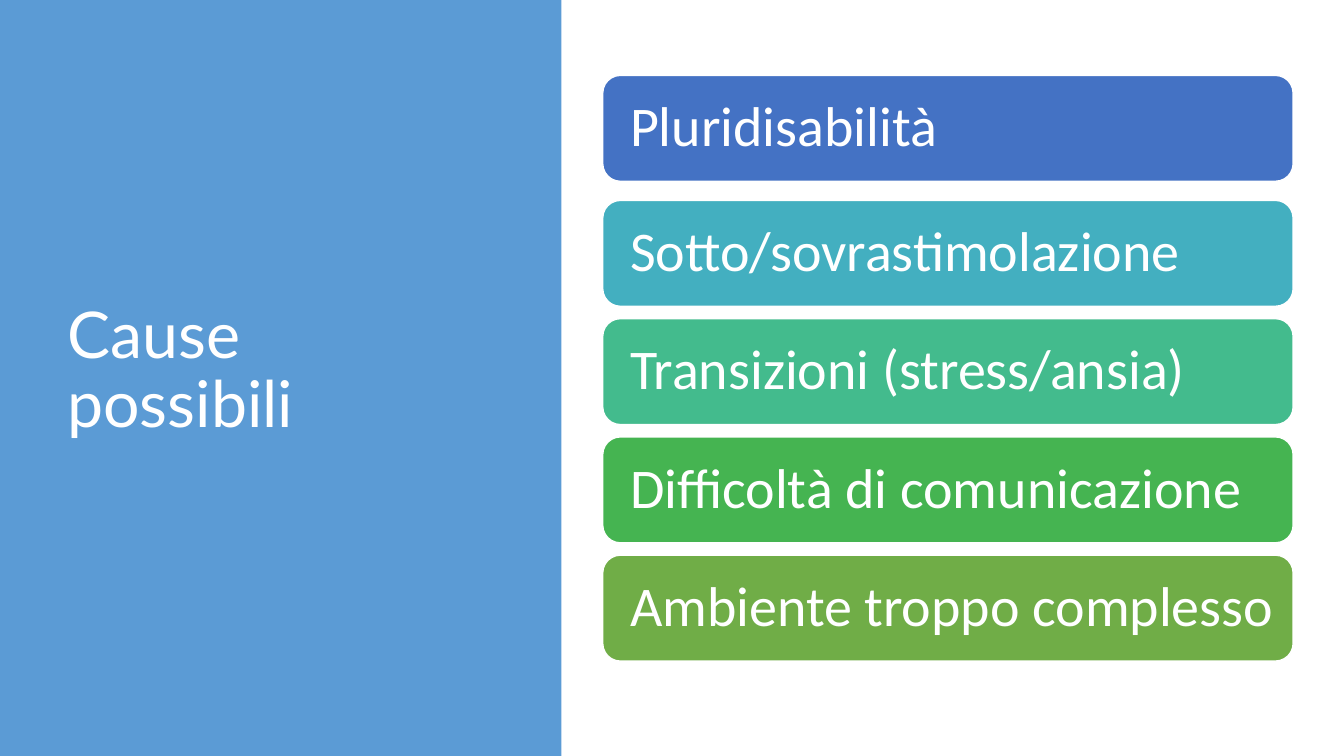
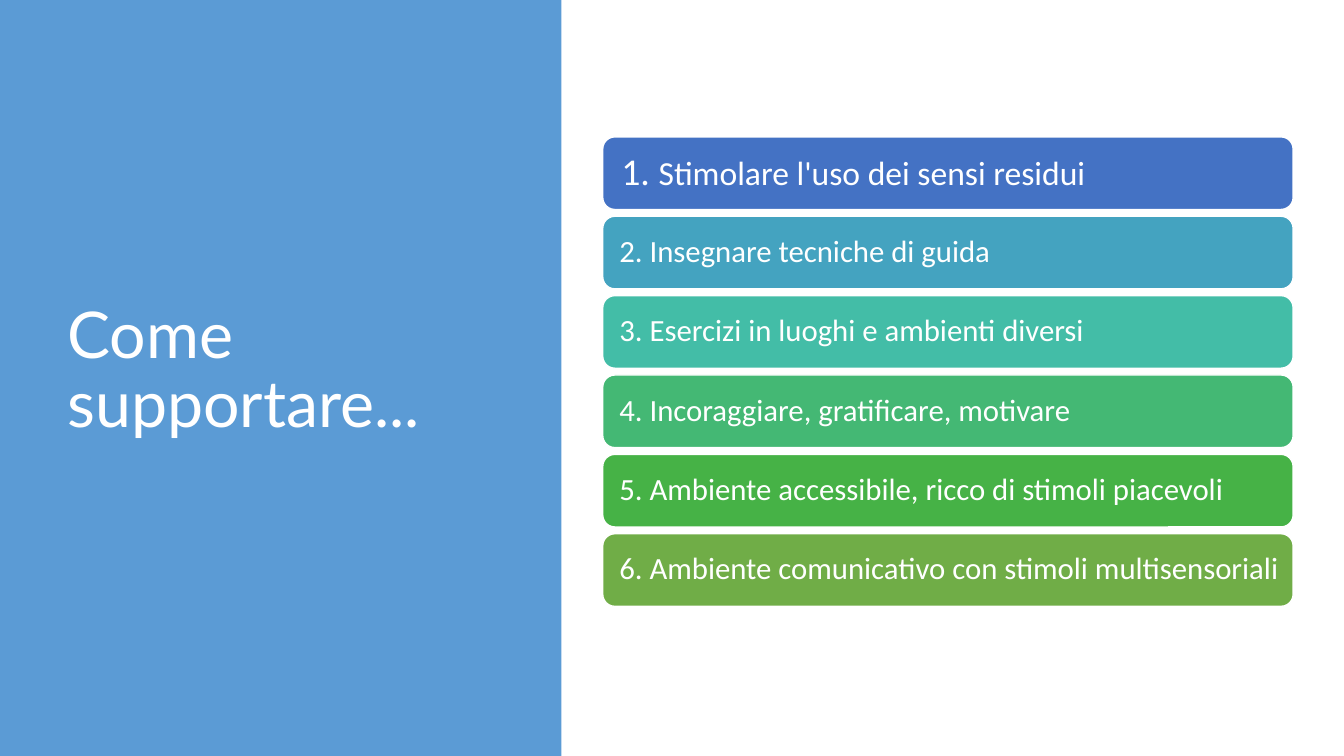
from pptx import Presentation
from pptx.dml.color import RGBColor
from pptx.enum import shapes, text
from pptx.util import Cm, Pt

HUES = {"panel": "5B9BD5", "white": "FFFFFF"}
FONTS = {"title": "Lato", "bar": "Calibri"}

# Content: each bar is (fill, left inset in cm, runs of (text, size))
DECK = [
    {
        "title": "Cause possibili", "wide": 10.57,
        "top": 1.9, "high": 2.67, "step": 2.98, "extra": 0.17,
        "bars": [
            ("4472C4", 0.56, [("Pluridisabilità", 40)]),
            ("43AFC0", 0.56, [("Sotto/sovrastimolazione", 40)]),
            ("43BB8D", 0.56, [("Transizioni (stress/ansia)", 40)]),
            ("45B451", 0.56, [("Difficoltà di comunicazione", 40)]),
            ("70AD47", 0.56, [("Ambiente troppo complesso", 40)]),
        ],
    },
    {
        "title": "Come supportare...", "wide": 11.73,
        "top": 3.45, "high": 1.83, "step": 2, "extra": 0,
        "bars": [
            ("4472C4", 0.38, [("1. ", 27), ("Stimolare l'uso dei sensi residui", 24)]),
            ("44A3C0", 0.33, [("2. Insegnare tecniche di guida", 22)]),
            ("43BDA7", 0.33, [("3. Esercizi in luoghi e ambienti diversi", 22)]),
            ("44B874", 0.33, [("4. Incoraggiare, gratificare, motivare", 22)]),
            ("46B246", 0.33, [("5. Ambiente accessibile, ricco di stimoli piacevoli", 22)]),
            ("70AD47", 0.33, [("6. Ambiente comunicativo con stimoli multisensoriali", 22)]),
        ],
    },
]


def rgb(hue):
    return RGBColor.from_string(hue)


def block(slide, kind, box, fill):
    shape = slide.shapes.add_shape(kind, *map(Cm, box))
    shape.shadow.inherit = False
    shape.fill.solid()
    shape.fill.fore_color.rgb = rgb(fill)
    shape.line.fill.background()
    return shape


def write(shape, runs, font, inset):
    frame = shape.text_frame
    form = {
        "word_wrap": True,
        "vertical_anchor": text.MSO_ANCHOR.MIDDLE,
        "margin_left": Cm(inset),
        "margin_right": Cm(0.25),
    }
    for name, value in form.items():
        setattr(frame, name, value)
    para = frame.paragraphs[0]
    para.alignment = text.PP_ALIGN.LEFT
    para.line_spacing = 0.9
    for words, size in runs:
        run = para.add_run()
        run.text = words
        for name, value in {"name": font, "size": Pt(size)}.items():
            setattr(run.font, name, value)
        run.font.color.rgb = rgb(HUES["white"])


def build(deck, page):
    slide = deck.slides.add_slide(deck.slide_layouts[6])

    # Side panel and title
    block(slide, shapes.MSO_SHAPE.RECTANGLE, (0, 0, 14.15, 19.05), HUES["panel"])
    title = slide.shapes.add_textbox(Cm(1.45), Cm(1.73), Cm(page["wide"]), Cm(15.29))
    write(title, [(page["title"], 46)], FONTS["title"], 0.25)

    # Stack of bars, with any extra gap below the first one
    for row, (fill, inset, runs) in enumerate(page["bars"]):
        top = page["top"] + row * page["step"] + (page["extra"] if row else 0)
        bar = block(slide, shapes.MSO_SHAPE.ROUNDED_RECTANGLE,
                    (15.19, top, 17.4, page["high"]), fill)
        bar.line.color.rgb = rgb(HUES["white"])
        bar.line.width = Pt(1)
        write(bar, runs, FONTS["bar"], inset)


def main():
    deck = Presentation()
    deck.slide_width, deck.slide_height = Cm(33.87), Cm(19.05)
    for page in DECK:
        build(deck, page)
    deck.save("out.pptx")


if __name__ == "__main__":
    main()
